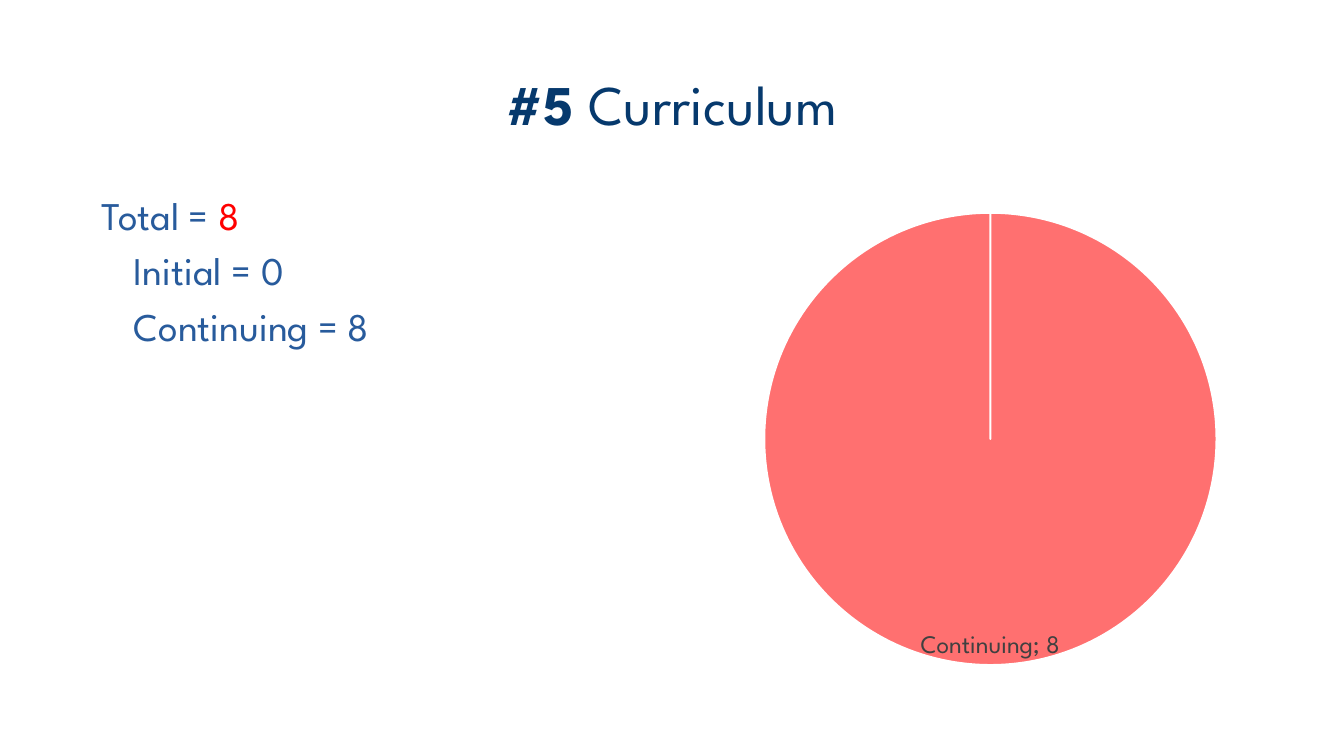
from pptx import Presentation
from pptx.chart.data import CategoryChartData
from pptx.dml.color import RGBColor
from pptx.enum.chart import XL_CHART_TYPE, XL_LABEL_POSITION
from pptx.enum.text import MSO_ANCHOR, PP_ALIGN
from pptx.oxml import parse_xml
from pptx.oxml.ns import nsdecls
from pptx.util import Pt

PIE = XL_CHART_TYPE.PIE
INSIDE_END = XL_LABEL_POSITION.INSIDE_END
MIDDLE, TOP = MSO_ANCHOR.MIDDLE, MSO_ANCHOR.TOP
CENTER, LEFT = PP_ALIGN.CENTER, PP_ALIGN.LEFT

PX = 12192000 / 1344
THEME = {
    "font": "League Spartan",
    "title": RGBColor(0x06, 0x39, 0x6D),
    "body": RGBColor(0x28, 0x5B, 0x9C),
    "accent": RGBColor(0xFF, 0x00, 0x00),
    "label": RGBColor(0x40, 0x40, 0x40),
    "line": RGBColor(0xFF, 0xFF, 0xFF),
    "slices": [RGBColor(0x9B, 0xBC, 0xE5), RGBColor(0xFF, 0x70, 0x70)],
    "title_size": Pt(40),
    "body_size": Pt(28),
    "label_size": Pt(18),
}


def px(*lengths):
    return [round(length * PX) for length in lengths]


def add_text(box, anchor, lines):
    """Each line is (alignment, indent in px, runs of (text, font values))."""
    frame = slide.shapes.add_textbox(*px(*box)).text_frame
    frame.word_wrap = True
    frame.vertical_anchor = anchor
    for index, (alignment, indent, runs) in enumerate(lines):
        paragraph = frame.paragraphs[0] if index == 0 else frame.add_paragraph()
        paragraph.alignment = alignment
        paragraph.space_before = Pt(6 if index else 0)
        paragraph._p.get_or_add_pPr().set("marL", str(px(indent)[0]))
        for text, color, size, bold in runs:
            run = paragraph.add_run()
            run.text = text
            run.font.color.rgb = THEME[color]
            values = {"name": THEME["font"], "size": THEME[size], "bold": bold}
            for name, value in values.items():
                setattr(run.font, name, value)


presentation = Presentation()
presentation.slide_width, presentation.slide_height = px(1344, 756)
slide = presentation.slides.add_slide(presentation.slide_layouts[6])

# Title
add_text((67, 51, 1210, 104), MIDDLE, [
    (CENTER, 0, [("#5 ", "title", "title_size", True),
                 ("Curriculum", "title", "title_size", False)]),
])

# Totals
add_text((67, 186, 597, 485), TOP, [
    (LEFT, 25, [("Total = ", "body", "body_size", False),
                ("8", "accent", "body_size", False)]),
    (LEFT, 57, [("Initial = 0", "body", "body_size", False)]),
    (LEFT, 57, [("Continuing = 8", "body", "body_size", False)]),
])

# Pie chart
counts = CategoryChartData()
counts.categories = ["Initial", "Continuing"]
counts.add_series("Series 1", [0, 8])
chart = slide.shapes.add_chart(PIE, *px(637, 196, 707, 486), counts).chart
chart.has_legend = False
chart.has_title = False
plot = chart.plots[0]
plot.vary_by_categories = True
for index, color in enumerate(THEME["slices"]):
    slice_format = plot.series[0].points[index].format
    slice_format.fill.solid()
    slice_format.fill.fore_color.rgb = color
    slice_format.line.color.rgb = THEME["line"]
    slice_format.line.width = Pt(1.5)

# Label on the filled slice only
chart.font.name = THEME["font"]
chart.font.size = THEME["label_size"]
chart.font.color.rgb = THEME["label"]
labels = plot.series[0].data_labels
label_values = {"show_value": True, "show_category_name": True,
                "show_percentage": False, "show_legend_key": False,
                "position": INSIDE_END}
for name, value in label_values.items():
    setattr(labels, name, value)
labels._element.insert(0, parse_xml(
    f'<c:dLbl {nsdecls("c")}><c:idx val="0"/><c:delete val="1"/></c:dLbl>'))

# Pie placement inside the chart frame
plot_area = chart._chartSpace.chart.plotArea
for layout in plot_area.findall(plot_area.tag.replace("plotArea", "layout")):
    plot_area.remove(layout)
plot_area.insert(0, parse_xml(
    f'<c:layout {nsdecls("c")}><c:manualLayout><c:layoutTarget val="inner"/>'
    '<c:xMode val="edge"/><c:yMode val="edge"/><c:x val="0.18"/><c:y val="0.03"/>'
    '<c:w val="0.64"/><c:h val="0.94"/></c:manualLayout></c:layout>'))

presentation.save("out.pptx")
